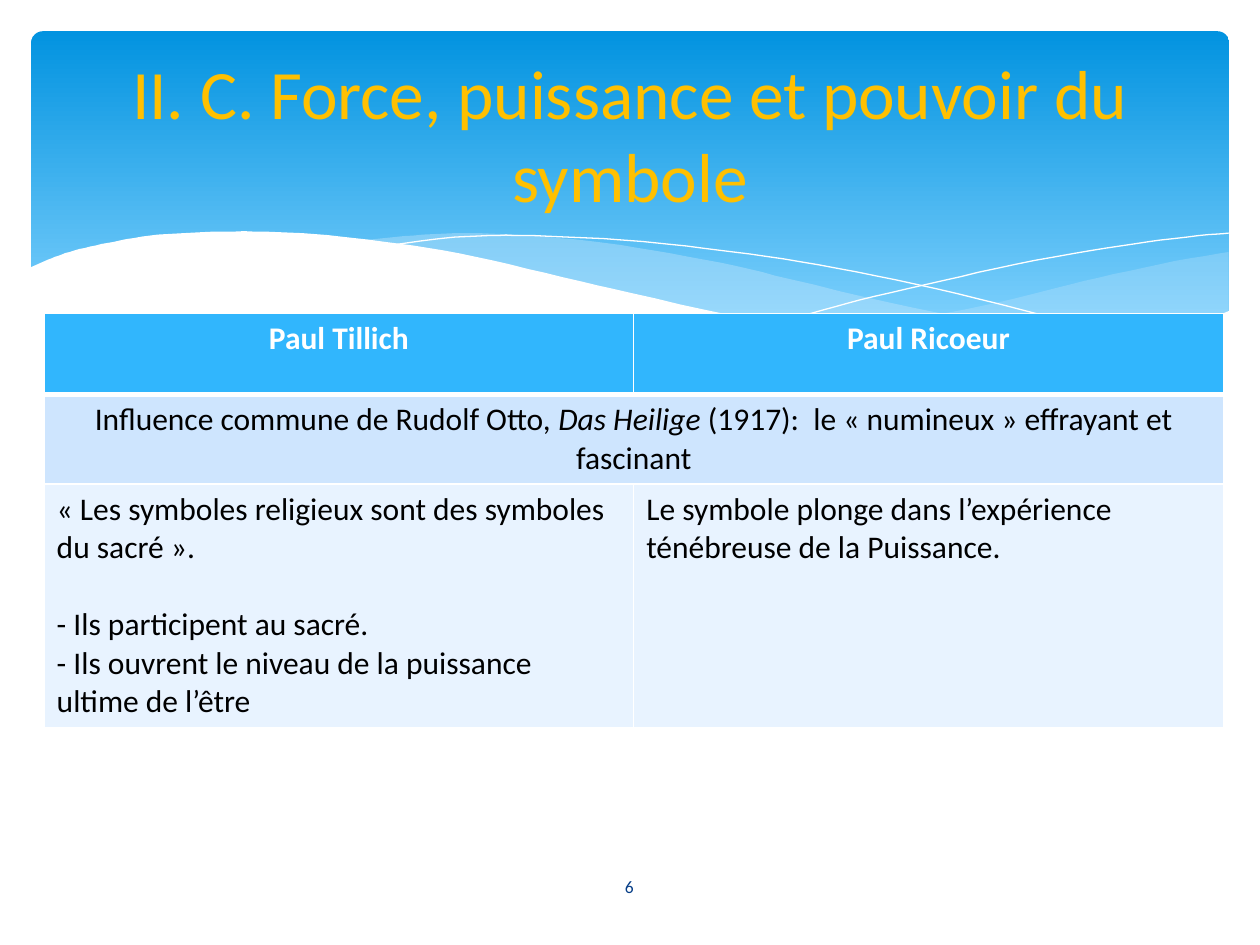
from lxml.etree import SubElement
from pptx import Presentation
from pptx.dml.color import RGBColor
from pptx.enum.shapes import MSO_SHAPE
from pptx.enum.text import MSO_ANCHOR, MSO_AUTO_SIZE, PP_ALIGN
from pptx.oxml.ns import qn
from pptx.util import Cm, Pt

WHITE = RGBColor(0xFF, 0xFF, 0xFF)
BLACK = RGBColor(0x00, 0x00, 0x00)
BANNER_TOP = RGBColor(0x02, 0x93, 0xE0)
BANNER_BOTTOM = RGBColor(0x83, 0xD3, 0xFE)
WAVE = RGBColor(0xC6, 0xE7, 0xFC)
GOLD = RGBColor(0xFF, 0xC0, 0x00)
NAVY = RGBColor(0x07, 0x3E, 0x87)
HEADER = RGBColor(0x31, 0xB6, 0xFD)
BAND_DARK = RGBColor(0xCE, 0xE5, 0xFE)
BAND_LIGHT = RGBColor(0xE8, 0xF3, 0xFF)
FONT = "Calibri"


def smooth(knots, steps=4):
    """Return points on a Catmull-Rom curve through the knots."""
    padded = [knots[0], *knots, knots[-1]]
    points = [knots[0]]
    for a, b, c, d in zip(padded, padded[1:], padded[2:], padded[3:]):
        for step in range(1, steps + 1):
            t = step / steps
            points.append(tuple(
                (2 * q + (r - p) * t + (2 * p - 5 * q + 4 * r - s) * t**2
                 + (3 * q - p - 3 * r + s) * t**3) / 2
                for p, q, r, s in zip(a, b, c, d)))
    return points


def add_curve(slide, points, close):
    """Draw points given in hundredths of a centimetre."""
    builder = slide.shapes.build_freeform(*points[0], scale=Cm(0.01))
    builder.add_line_segments(points[1:], close=close)
    curve = builder.convert_to_shape()
    curve.shadow.inherit = False
    return curve


deck = Presentation()
deck.slide_width, deck.slide_height = Cm(25.4), Cm(19.05)
page = deck.slides.add_slide(deck.slide_layouts[5])

# Banner
banner = page.shapes.add_shape(
    MSO_SHAPE.ROUNDED_RECTANGLE, Cm(0.63), Cm(0.63), Cm(24.15), Cm(6.86))
banner.adjustments[0] = 0.034
banner.shadow.inherit = False
banner.line.fill.background()
banner.fill.gradient()
banner.fill.gradient_angle = 270
for stop, position, color in zip(
        banner.fill.gradient_stops, (0, 0.9), (BANNER_TOP, BANNER_BOTTOM)):
    stop.position = position
    stop.color.rgb = color

# Waves
right_wave = smooth([
    (2477, 508), (2369, 526), (2263, 549), (2187, 566), (2045, 602),
    (1913, 630), (1793, 653), (1679, 673),
]) + smooth([
    (1679, 673), (1755, 683), (1826, 691), (1923, 699), (2012, 704),
    (2093, 706), (2169, 704), (2238, 699), (2299, 691), (2339, 683),
    (2375, 673), (2410, 660), (2446, 640), (2477, 627),
])
middle_wave = smooth([
    (2268, 693), (2126, 673), (1969, 645), (1793, 610), (1598, 564),
    (1483, 536), (1374, 515), (1275, 498), (1181, 485), (1067, 475),
    (965, 470), (874, 472), (795, 478), (726, 485),
]) + smooth([
    (726, 485), (820, 498), (919, 516), (1026, 536), (1140, 564),
    (1247, 589), (1346, 610), (1438, 630), (1527, 648), (1610, 663),
    (1689, 676), (1765, 686), (1834, 693), (1900, 699), (1963, 704),
    (2022, 706), (2078, 706), (2129, 706), (2177, 704), (2225, 699),
    (2268, 693),
])
for outline, opacity in ((right_wave, 29), (middle_wave, 40)):
    wave = add_curve(page, outline, close=True)
    wave.line.fill.background()
    wave.fill.solid()
    wave.fill.fore_color.rgb = WAVE
    color_node = wave.element.spPr.find(".//" + qn("a:srgbClr"))
    SubElement(color_node, qn("a:alpha"), val=str(opacity * 1000))

falling_line = [
    (785, 495), (833, 488), (897, 480), (983, 475), (1057, 475),
    (1143, 478), (1242, 483), (1354, 493), (1478, 508), (1615, 528),
    (1765, 556), (1930, 592), (2111, 638), (2304, 691),
]
rising_line = [
    (1557, 653), (1659, 625), (1765, 597), (1900, 566), (2047, 533),
    (2200, 505), (2311, 488), (2416, 475), (2477, 470),
]
for knots in (falling_line, rising_line):
    curve = add_curve(page, smooth(knots), close=False)
    curve.fill.background()
    curve.line.color.rgb = WHITE
    curve.line.width = Pt(0)

white_edge = smooth([
    (2482, 625), (2413, 650), (2337, 673), (2253, 688), (2159, 699),
    (2055, 704), (1933, 699), (1798, 686), (1646, 665), (1471, 635),
    (1278, 592), (1135, 559), (993, 525), (864, 500), (742, 483),
    (635, 472), (536, 467), (450, 467), (371, 470), (302, 475),
    (241, 485), (193, 495), (150, 505), (117, 516), (91, 526), (58, 541),
])
white_wave = add_curve(page, white_edge + [(58, 836), (2482, 836)], close=True)
white_wave.line.fill.background()
white_wave.fill.solid()
white_wave.fill.fore_color.rgb = WHITE

# Table: each cell holds paragraphs
rows = [
    [["Paul Tillich"], ["Paul Ricoeur"]],
    [[""], [""]],
    [["« Les symboles religieux sont des symboles du sacré ».",
      "- Ils participent au sacré.",
      "- Ils ouvrent le niveau de la puissance ultime de l’être"],
     ["Le symbole plonge dans l’expérience ténébreuse de la Puissance."]],
]
influence = [
    ("Influence commune de Rudolf Otto, ", False),
    ("Das Heilige ", True),
    ("(1917):  le « numineux » effrayant et fascinant", False),
]
frame = page.shapes.add_table(3, 2, Cm(0.89), Cm(6.32), Cm(23.77), Cm(8.23))
table = frame.table
for row, height in zip(table.rows, (1.63, 1.37, 1.63)):
    row.height = Cm(height)
frame.height = Cm(8.23)
table.cell(1, 0).merge(table.cell(1, 1))

for row_index, (texts, fill) in enumerate(zip(rows, (HEADER, BAND_DARK, BAND_LIGHT))):
    for column_index, lines in enumerate(texts):
        cell = table.cell(row_index, column_index)
        cell.text_frame.text = "\n".join(lines)
        if row_index == 1 and column_index == 0:
            for text, italic in influence:
                span = cell.text_frame.paragraphs[0].add_run()
                span.text = text
                span.font.italic = italic
        for para in cell.text_frame.paragraphs:
            para.alignment = PP_ALIGN.LEFT if row_index == 2 else PP_ALIGN.CENTER
            para.font.size = Pt(18)
            for span in para.runs:
                span.font.name = FONT
                span.font.size = Pt(18)
                span.font.bold = row_index == 0
                span.font.color.rgb = WHITE if row_index == 0 else BLACK
        properties = cell._tc.get_or_add_tcPr()
        for side in ("L", "R", "T", "B"):
            thick = (row_index, side) in ((0, "B"), (1, "T"))
            border = SubElement(
                properties, qn("a:ln" + side), w=str(Pt(3 if thick else 1)))
            paint = SubElement(border, qn("a:solidFill"))
            SubElement(paint, qn("a:srgbClr"), val=str(WHITE))
        cell.fill.solid()
        cell.fill.fore_color.rgb = fill
table.cell(2, 0).text_frame.paragraphs[1].space_before = Pt(22)

# Slide number and title
number = page.shapes.add_textbox(Cm(11.07), Cm(17.37), Cm(3.23), Cm(1.02))
number.text_frame.text = "6"
title = page.shapes.title
title.left, title.top, title.width, title.height = Cm(1.27), Cm(0.94), Cm(22.86), Cm(3.48)
title.text_frame.text = "II. C. Force, puissance et pouvoir du symbole"
page.shapes.element.append(title.element)
for box, size, color in ((number, 10, NAVY), (title, 39.6, GOLD)):
    box.text_frame.word_wrap = True
    box.text_frame.auto_size = MSO_AUTO_SIZE.NONE
    box.text_frame.vertical_anchor = MSO_ANCHOR.MIDDLE
    para = box.text_frame.paragraphs[0]
    para.alignment = PP_ALIGN.CENTER
    para.runs[0].font.name = FONT
    para.runs[0].font.size = Pt(size)
    para.runs[0].font.color.rgb = color

deck.save("out.pptx")
